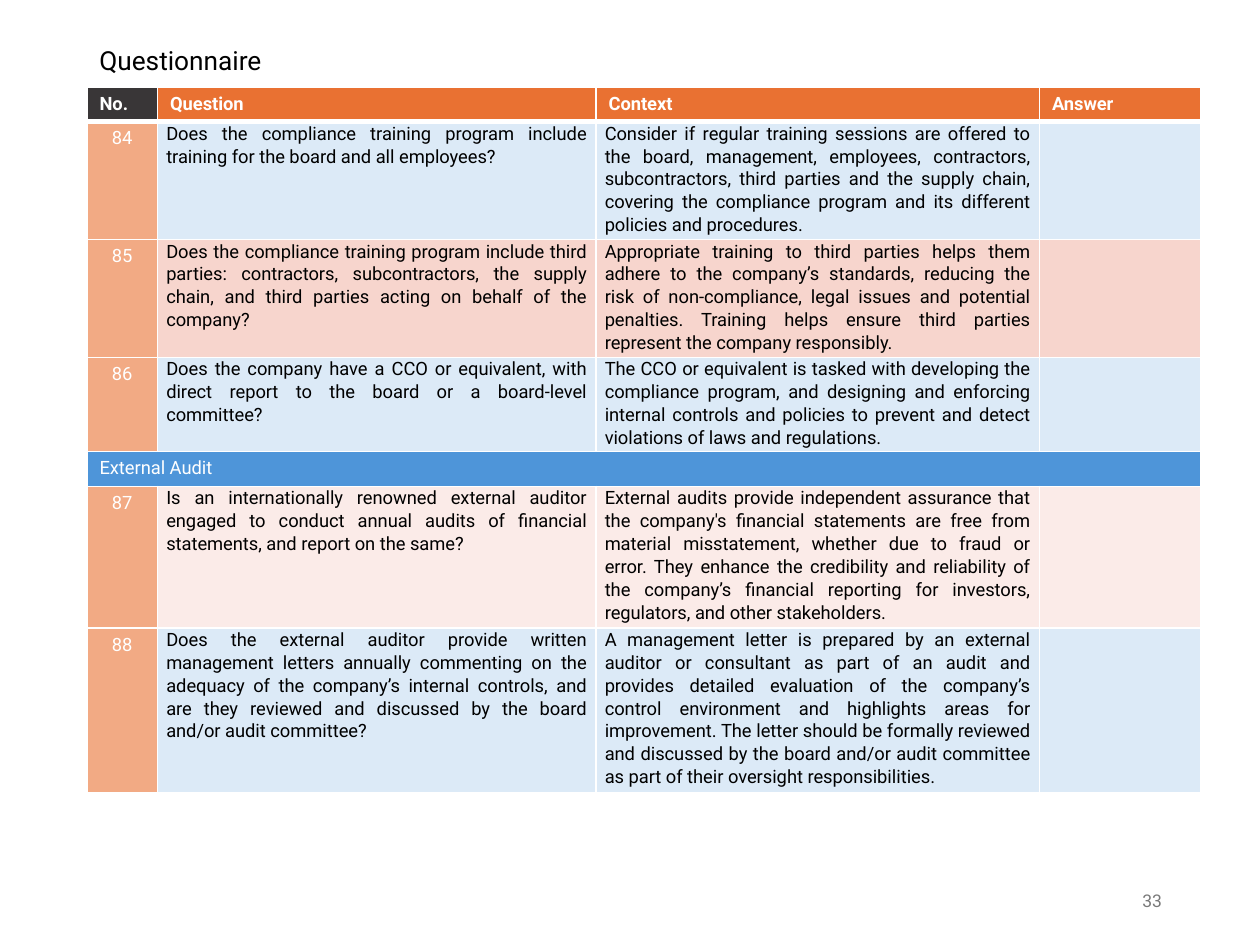
from lxml import etree
from pptx import Presentation, util as u
from pptx.dml.color import RGBColor
from pptx.enum import text
from pptx.oxml import ns

WHITE = RGBColor(0xFF, 0xFF, 0xFF)
BLACK = RGBColor(0, 0, 0)
GRAY = RGBColor(0x79, 0x79, 0x79)
DARK = RGBColor(0x39, 0x36, 0x37)
ORANGE = RGBColor(0xE9, 0x71, 0x32)
PEACH = RGBColor(0xF2, 0xAA, 0x84)
BLUE = RGBColor(0x4E, 0x95, 0xD9)
PALE = RGBColor(0xDC, 0xEA, 0xF7)
PINK = RGBColor(0xF7, 0xD5, 0xCD)
ROSE = RGBColor(0xFB, 0xEB, 0xE8)

FONT = "Roboto"
LEFT, TOP = 0.69, 0.69
COLS = [0.56, 3.48, 3.52, 1.28]
LINE = 0.182  # height of one line of body text
BAND = 0.26   # height of a header or section row
HEAD = ["No.", "Question", "Context", "Answer"]

# Number, question, context, fill, lines of text; a lone string is a section
ROWS = [
    ("84", "Does the compliance training program include training for the board and all employees?",
     "Consider if regular training sessions are offered to the board, management, employees, "
     "contractors, subcontractors, third parties and the supply chain, covering the compliance "
     "program and its different policies and procedures.", PALE, 5),
    ("85", "Does the compliance training program include third parties: contractors, "
     "subcontractors, the supply chain, and third parties acting on behalf of the company?",
     "Appropriate training to third parties helps them adhere to the company’s standards, "
     "reducing the risk of non-compliance, legal issues and potential penalties. Training helps "
     "ensure third parties represent the company responsibly.", PINK, 5),
    ("86", "Does the company have a CCO or equivalent, with direct report to the board or a "
     "board-level committee?",
     "The CCO or equivalent is tasked with developing the compliance program, and designing and "
     "enforcing internal controls and policies to prevent and detect violations of laws and "
     "regulations.", PALE, 4),
    "External Audit",
    ("87", "Is an internationally renowned external auditor engaged to conduct annual audits of "
     "financial statements, and report on the same?",
     "External audits provide independent assurance that the company's financial statements are "
     "free from material misstatement, whether due to fraud or error. They enhance the "
     "credibility and reliability of the company’s financial reporting for investors, "
     "regulators, and other stakeholders.", ROSE, 6),
    ("88", "Does the external auditor provide written management letters annually commenting on "
     "the adequacy of the company’s internal controls, and are they reviewed and discussed by "
     "the board and/or audit committee?",
     "A management letter is prepared by an external auditor or consultant as part of an audit "
     "and provides detailed evaluation of the company’s control environment and highlights areas "
     "for improvement. The letter should be formally reviewed and discussed by the board and/or "
     "audit committee as part of their oversight responsibilities.", PALE, 7),
]


def write(frame, words, size, color, align=text.PP_ALIGN.LEFT, bold=False):
    """Fill the frame's first paragraph and return it."""
    para = frame.paragraphs[0]
    para.text = words
    para.alignment = align
    para.font.name, para.font.size = FONT, u.Pt(size)
    para.font.color.rgb, para.font.bold = color, bold
    return para


def paint(cell, fill, top=1, foot=1):
    """Give the cell white borders (widths in points) and a fill."""
    props = cell._tc.get_or_add_tcPr()
    for side, width in zip("LRTB", (1, 1, top, foot)):
        edge = etree.SubElement(props, ns.qn("a:ln" + side), w=str(u.Pt(width)))
        solid = etree.SubElement(edge, ns.qn("a:solidFill"))
        etree.SubElement(solid, ns.qn("a:srgbClr"), val=str(WHITE))
    cell.fill.solid()
    cell.fill.fore_color.rgb = fill


deck = Presentation()
deck.slide_width, deck.slide_height = u.Inches(10), u.Inches(7.5)
slide = deck.slides.add_slide(deck.slide_layouts[6])

# Title and page number
for words, box, size, color, align in [
    ("Questionnaire", (LEFT, 0.27, 8.62, 0.42), 15, BLACK, text.PP_ALIGN.LEFT),
    ("33", (6.58, 6.95, 2.74, 0.4), 10, GRAY, text.PP_ALIGN.RIGHT),
]:
    frame = slide.shapes.add_textbox(*map(u.Inches, box)).text_frame
    frame.word_wrap = True
    frame.vertical_anchor = text.MSO_ANCHOR.MIDDLE
    write(frame, words, size, color, align)

# Table grid
highs = [BAND] + [BAND if isinstance(row, str) else row[-1] * LINE for row in ROWS]
grid = slide.shapes.add_table(
    len(highs), len(COLS), u.Inches(LEFT), u.Inches(TOP),
    u.Inches(sum(COLS)), u.Inches(sum(highs))).table
for col, width in zip(grid.columns, COLS):
    col.width = u.Inches(width)
for row, high in zip(grid.rows, highs):
    row.height = u.Inches(high)

for c, words in enumerate(HEAD):
    cell = grid.cell(0, c)
    paint(cell, ORANGE if c else DARK, foot=3)
    write(cell.text_frame, words, 10.5, WHITE, bold=True)

for r, row in enumerate(ROWS, 1):
    if isinstance(row, str):
        cell = grid.cell(r, 0)
        cell.merge(grid.cell(r, len(COLS) - 1))
        paint(cell, BLUE)
        write(cell.text_frame, row, 10.5, WHITE)
        continue
    num, ask, why, fill, _ = row
    for c, words in enumerate([num, ask, why, ""]):
        cell = grid.cell(r, c)
        paint(cell, fill if c else PEACH, top=3 if r == 1 else 1)
        if c == 0:
            write(cell.text_frame, words, 10.5, WHITE, text.PP_ALIGN.CENTER)
        elif words:
            cell.margin_left = cell.margin_right = u.Inches(0.07)
            cell.margin_top = cell.margin_bottom = 0
            para = write(cell.text_frame, words, 10.5, BLACK, text.PP_ALIGN.JUSTIFY)
            para.line_spacing = 1.07
            para.space_after = u.Pt(2)

deck.save("out.pptx")
